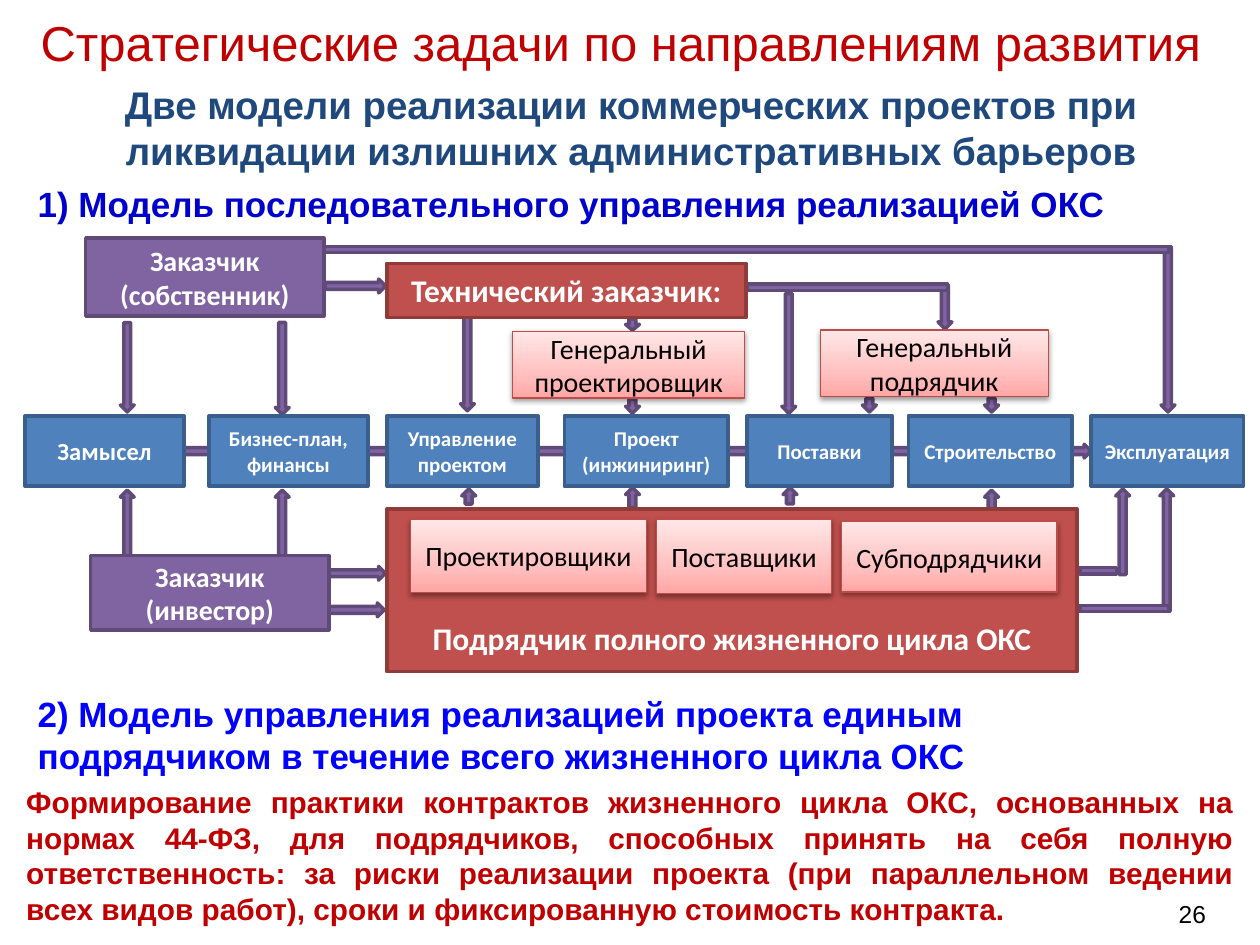
from copy import deepcopy
from lxml import etree
from pptx import Presentation
from pptx.dml.color import RGBColor
from pptx.enum.shapes import MSO_SHAPE
from pptx.enum.text import MSO_ANCHOR, PP_ALIGN
from pptx.oxml.ns import qn
from pptx.util import Inches, Pt

THEME = {
    "heading": "Arial", "diagram": "Calibri",
    "stage": {"fill": "4F81BD", "line": "3A5F8C"},
    "customer": {"fill": "8064A2", "line": "5F4A78"},
    "contractor": {"fill": "C0504D", "line": "8E3B39"},
    "partner": {"stops": [(0, "FFA6A5"), (0.35, "FFC0BF"), (1, "FFE7E7")], "line": "BF4C48"},
    "white": "FFFFFF", "black": "000000", "red": "C00000", "navy": "1F497D",
    "sizes": {"stage": 12, "customer": 16, "contractor": 18, "partner": 16},
}

# Headings and notes: text, (left, top, width, height), format
TEXTS = [
    ("Стратегические задачи по направлениям развития", (0.11, 0, 9.63, 0.66),
     {"size": 28, "color": THEME["red"], "align": PP_ALIGN.CENTER}),
    ("Две модели реализации коммерческих проектов при ликвидации излишних административных барьеров",
     (0.12, 0.6, 9.78, 0.82),
     {"size": 22, "color": THEME["navy"], "bold": True, "align": PP_ALIGN.CENTER}),
    ("1) Модель последовательного управления реализацией ОКС", (0.2, 1.4, 9.47, 0.44),
     {"size": 20, "color": "0000CC", "bold": True, "anchor": MSO_ANCHOR.TOP}),
    ("2) Модель управления реализацией проекта единым подрядчиком в течение всего жизненного цикла ОКС",
     (0.2, 5.45, 9.48, 0.77),
     {"size": 20, "color": "0000FF", "bold": True, "anchor": MSO_ANCHOR.TOP}),
    ("Формирование практики контрактов жизненного цикла ОКС, основанных на нормах 44-ФЗ, "
     "для подрядчиков, способных принять на себя полную ответственность: за риски реализации "
     "проекта (при параллельном ведении всех видов работ), сроки и фиксированную стоимость контракта.",
     (0.11, 6.17, 9.78, 1.25),
     {"size": 17, "color": THEME["red"], "bold": True, "align": PP_ALIGN.JUSTIFY,
      "anchor": MSO_ANCHOR.TOP}),
    ("26", (7.34, 7.05, 2.33, 0.4),
     {"size": 14, "color": THEME["black"], "align": PP_ALIGN.RIGHT}),
]

# Project stages in one row: text, left, width
STAGE_TOP, STAGE_HEIGHT = 3.3, 0.56
STAGES = [
    ("Замысел", 0.2, 1.26), ("Бизнес-план, финансы", 1.66, 1.26),
    ("Управление проектом", 3.07, 1.2), ("Проект (инжиниринг)", 4.48, 1.3),
    ("Поставки", 5.93, 1.15), ("Строительство", 7.21, 1.3), ("Эксплуатация", 8.66, 1.21),
]

# Participants: text, role, (left, top, width, height)
PARTICIPANTS = [
    ("Заказчик\v(собственник)", "customer", (0.68, 1.89, 1.89, 0.62)),
    ("Заказчик\v(инвестор)", "customer", (0.72, 4.41, 1.89, 0.59)),
    ("Технический заказчик:", "contractor", (3.07, 2.09, 2.85, 0.43)),
    ("Подрядчик полного жизненного цикла ОКС", "contractor", (3.07, 4.04, 5.48, 1.29)),
    ("Генеральный проектировщик", "partner", (4.07, 2.63, 1.84, 0.53)),
    ("Генеральный подрядчик", "partner", (6.51, 2.62, 1.81, 0.53)),
    ("Проектировщики", "partner", (3.26, 4.12, 1.87, 0.58)),
    ("Поставщики", "partner", (5.21, 4.12, 1.39, 0.59)),
    ("Субподрядчики", "partner", (6.68, 4.14, 1.71, 0.56)),
]

# Block arrows: vertical as (centre x, top, bottom), horizontal as (centre y, left, right)
ARROW, BAR = 0.11, 0.05
DOWN = [(1.01, 2.56, 3.27), (2.24, 2.56, 3.29), (9.27, 1.96, 3.27), (3.71, 2.49, 3.26),
        (5.02, 2.53, 2.62), (6.26, 2.33, 3.28), (7.87, 3.16, 3.27), (6.9, 3.16, 3.27),
        (5.02, 3.17, 3.28), (7.5, 2.26, 2.61)]
UP = [(1.01, 3.89, 4.42), (2.24, 3.89, 4.42), (3.72, 3.88, 4), (5.02, 3.87, 4.03),
      (6.27, 3.87, 4), (7.87, 3.89, 4.04), (8.91, 3.88, 4.56), (9.26, 3.88, 4.85)]
RIGHT = [(3.58, 1.46, 8.66), (2.27, 2.58, 3.06), (4.55, 2.6, 3.06), (4.84, 2.61, 3.05)]
BARS = [(2.28, 5.93, 7.52), (4.53, 8.57, 8.86), (4.83, 8.57, 9.28), (1.98, 2.57, 9.28)]

presentation = Presentation()
presentation.slide_width, presentation.slide_height = Inches(10), Inches(7.5)
slide = presentation.slides.add_slide(presentation.slide_layouts[6])


def write(shape, text, size, color, font, bold=False, align=PP_ALIGN.LEFT,
          anchor=MSO_ANCHOR.MIDDLE):
    frame = shape.text_frame
    frame.text = text
    frame.word_wrap, frame.vertical_anchor = True, anchor
    paragraph = frame.paragraphs[0]
    paragraph.alignment = align
    for run in paragraph.runs:
        for name, value in {"size": Pt(size), "bold": bold, "name": font}.items():
            setattr(run.font, name, value)
        run.font.color.rgb = RGBColor.from_string(color)


def add_block(kind, place, style, line_width=2):
    block = slide.shapes.add_shape(kind, *map(Inches, place))
    block.shadow.inherit = False
    block.line.color.rgb = RGBColor.from_string(style["line"])
    block.line.width = Pt(line_width)
    if "stops" in style:
        shade(block, style["stops"])
    else:
        block.fill.solid()
        block.fill.fore_color.rgb = RGBColor.from_string(style["fill"])
    return block


def shade(block, stops):
    """Vertical gradient with a soft shadow below."""
    block.fill.gradient()
    block.fill.gradient_angle = 90
    stop_list = block.element.spPr.find(".//" + qn("a:gsLst"))
    stop_list.append(deepcopy(stop_list[0]))
    for stop, (position, color) in zip(block.fill.gradient_stops, stops):
        stop.position, stop.color.rgb = position, RGBColor.from_string(color)
    effects = block.element.spPr.find(qn("a:effectLst"))
    shadow = etree.SubElement(effects, qn("a:outerShdw"), blurRad="40000", dist="20000",
                              dir="5400000", rotWithShape="0")
    tone = etree.SubElement(shadow, qn("a:srgbClr"), val=THEME["black"])
    etree.SubElement(tone, qn("a:alpha"), val="38000")


def add_box(text, role, place):
    partner = role == "partner"
    box = add_block(MSO_SHAPE.RECTANGLE, place, THEME[role], 0.75 if partner else 2)
    size = 14 if text == STAGES[0][0] else THEME["sizes"][role]
    write(box, text, size, THEME["black" if partner else "white"], THEME["diagram"],
          bold=not partner, align=PP_ALIGN.CENTER)
    return box


# Arrows and bars lie under the boxes
for kind, arrows in ((MSO_SHAPE.DOWN_ARROW, DOWN), (MSO_SHAPE.UP_ARROW, UP)):
    for center, top, bottom in arrows:
        add_block(kind, (center - ARROW / 2, top, ARROW, bottom - top), THEME["customer"])
for kind, thickness, runs in ((MSO_SHAPE.RIGHT_ARROW, ARROW, RIGHT),
                              (MSO_SHAPE.RECTANGLE, BAR, BARS)):
    for center, left, right in runs:
        add_block(kind, (left, center - thickness / 2, right - left, thickness),
                  THEME["customer"])

# Stages and participants
for text, left, width in STAGES:
    add_box(text, "stage", (left, STAGE_TOP, width, STAGE_HEIGHT))
for text, role, place in PARTICIPANTS:
    box = add_box(text, role, place)
    if place[3] > 1:  # the partners sit above this caption
        box.text_frame.vertical_anchor = MSO_ANCHOR.BOTTOM
        box.text_frame.margin_bottom = Inches(0.12)

# Headings, conclusion and page number
for text, place, style in TEXTS:
    write(slide.shapes.add_textbox(*map(Inches, place)), text, font=THEME["heading"], **style)

presentation.save("out.pptx")
